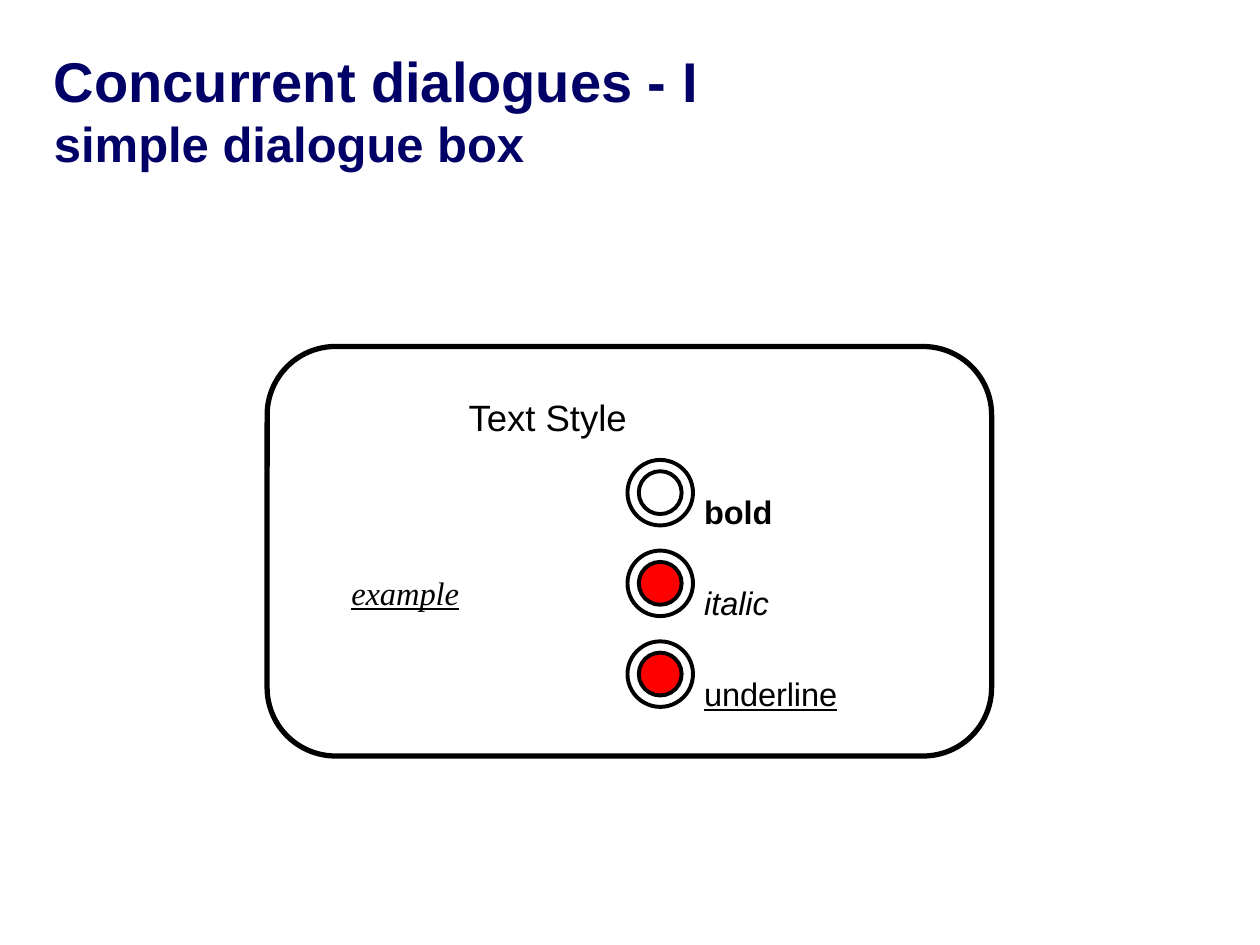
from pptx import Presentation
from pptx.dml.color import RGBColor
from pptx.enum.shapes import MSO_SHAPE
from pptx.enum.text import MSO_ANCHOR
from pptx.util import Inches, Pt

ROUNDED = MSO_SHAPE.ROUNDED_RECTANGLE
OVAL = MSO_SHAPE.OVAL
TOP, BOTTOM = MSO_ANCHOR.TOP, MSO_ANCHOR.BOTTOM

NAVY, BLACK, WHITE, RED = "000066", "000000", "FFFFFF", "FF0000"
SUBSCRIPT = "-25000"


def color(hex_string):
    return RGBColor.from_string(hex_string)


def add_run(paragraph, text, size, font="Arial", ink=BLACK, bold=False,
            italic=False, underline=False, subscript=False):
    run = paragraph.add_run()
    run.text = text
    run.font.name = font
    run.font.size = Pt(size)
    run.font.bold = bold
    run.font.italic = italic
    run.font.underline = underline
    run.font.color.rgb = color(ink)
    if subscript:
        run.font._element.set("baseline", SUBSCRIPT)


def add_text_frame(slide, left, top, width, height, anchor=TOP):
    box = slide.shapes.add_textbox(Inches(left), Inches(top),
                                   Inches(width), Inches(height))
    frame = box.text_frame
    frame.word_wrap = True
    frame.vertical_anchor = anchor
    return frame


def add_label(slide, text, left, top, width, height, size=32, **style):
    frame = add_text_frame(slide, left, top, width, height)
    add_run(frame.paragraphs[0], text, size, subscript=True, **style)


def add_outline(slide, kind, left, top, width, height, fill, weight):
    outline = slide.shapes.add_shape(kind, Inches(left), Inches(top),
                                     Inches(width), Inches(height))
    outline.shadow.inherit = False
    outline.fill.solid()
    outline.fill.fore_color.rgb = color(fill)
    outline.line.color.rgb = color(BLACK)
    outline.line.width = Pt(weight)
    return outline


def add_title(slide, left, top, width, height):
    heading = add_text_frame(slide, left, top, width, height, BOTTOM).paragraphs[0]
    add_run(heading, "Concurrent dialogues - I", 32, ink=NAVY, bold=True)
    heading.add_line_break()
    add_run(heading, "simple dialogue box", 28, ink=NAVY, bold=True)


def add_option(slide, left, top, text, width, selected, **style):
    """Round button made of two concentric rings, with its label."""
    outer, inner = 0.52, 0.34
    inset = (outer - inner) / 2
    add_outline(slide, OVAL, left, top, outer, outer, WHITE, 2.25)
    add_outline(slide, OVAL, left + inset, top + inset, inner, inner,
                RED if selected else WHITE, 2.25)
    add_label(slide, text, left + 0.51, top - 0.09, width, 0.63, **style)


def add_dialogue_box(slide, left, top, width, height):
    # Frame and heading
    frame = add_outline(slide, ROUNDED, left, top, width, height, WHITE, 3)
    frame.adjustments[0] = 0.167
    add_label(slide, "Text Style", left + 1.5, top, 2.42, 0.7, size=36)

    # Style options
    options = [
        ("bold", 1.14, False, {"bold": True}),
        ("italic", 1.09, True, {"italic": True}),
        ("underline", 2.03, True, {"underline": True}),
    ]
    for row, (text, label_width, selected, style) in enumerate(options):
        add_option(slide, left + 2.86, top + 0.9 + row * 0.72, text,
                   label_width, selected, **style)

    # Sample showing the selected styles
    add_label(slide, "example", left + 0.57, top + 1.45, 1.68, 0.63,
              font="Times New Roman", italic=True, underline=True)


def main():
    deck = Presentation()
    deck.slide_width, deck.slide_height = Inches(10), Inches(7.5)
    slide = deck.slides.add_slide(deck.slide_layouts[6])
    add_title(slide, 0.33, 0.33, 9.42, 1.09)
    add_dialogue_box(slide, 2.12, 2.75, 5.75, 3.25)
    deck.save("out.pptx")


if __name__ == "__main__":
    main()
